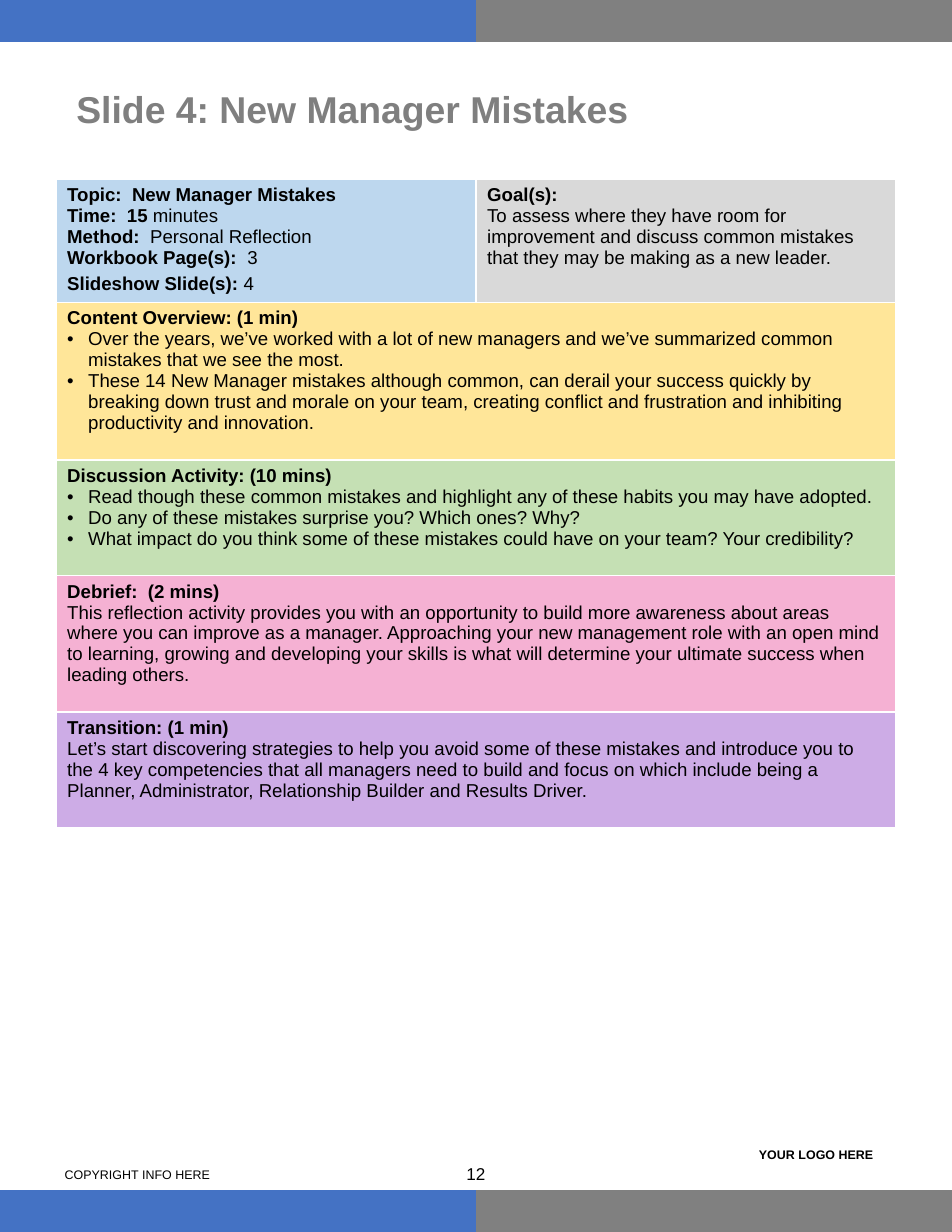
from lxml import etree
from pptx import Presentation
from pptx import util as u
from pptx.dml.color import RGBColor
from pptx.enum import shapes, text
from pptx.oxml import ns

COLORS = {
    "blue": "4472C4", "gray": "808080", "title": "7F7F7F", "black": "000000",
    "white": "FFFFFF", "topic": "BDD7EE", "goals": "D9D9D9",
    "overview": "FFE699", "activity": "C5E0B4", "debrief": "F5B1D3",
    "transition": "CDACE6",
}
WIDTH, HEIGHT, BAND = 612, 792, 27
INDENT = 13.5


def color(name):
    return RGBColor.from_string(COLORS[name])


def add_span(para, words, size=12, bold=False, ink="black", font="Arial"):
    span = para.add_run()
    span.text = words
    span.font.name = font
    span.font.size = u.Pt(size)
    span.font.bold = bold
    span.font.color.rgb = color(ink)


def add_child(parent, tag, **attributes):
    return etree.SubElement(parent, ns.qn(tag), attributes)


class GuidePage:
    """Holds the current slide and the border and bullet style."""

    def __init__(self, slide, border="white", border_width=1, bullet="•"):
        self.slide = slide
        self.border = border
        self.border_width = border_width
        self.bullet = bullet

    def bar(self, left, top, width, height, fill):
        box = self.slide.shapes.add_shape(
            shapes.MSO_SHAPE.RECTANGLE, *map(u.Pt, (left, top, width, height)))
        box.shadow.inherit = False
        box.fill.solid()
        box.fill.fore_color.rgb = color(fill)
        box.line.fill.background()

    def label(self, words, left, top, width, height, align="LEFT",
              anchor="TOP", line_spacing=1.0, **style):
        box = self.slide.shapes.add_textbox(*map(u.Pt, (left, top, width, height)))
        frame = box.text_frame
        frame.word_wrap = True
        frame.vertical_anchor = text.MSO_ANCHOR[anchor]
        para = frame.paragraphs[0]
        para.alignment = text.PP_ALIGN[align]
        para.line_spacing = line_spacing
        add_span(para, words, **style)

    def table(self, left, top, widths, heights):
        frame = self.slide.shapes.add_table(
            len(heights), len(widths),
            *map(u.Pt, (left, top, sum(widths), sum(heights))))
        table = frame.table
        table.first_row = table.horz_banding = False
        for column, width in zip(table.columns, widths):
            column.width = u.Pt(width)
        for row, height in zip(table.rows, heights):
            row.height = u.Pt(height)
        return table

    def cell(self, cell, fill, lines):
        """Each line is (bold part, regular part, is bulleted)."""
        self.cell_borders(cell)
        cell.fill.solid()
        cell.fill.fore_color.rgb = color(fill)
        cell.margin_bottom = 0
        frame = cell.text_frame
        for index, (bold, regular, bulleted) in enumerate(lines):
            para = frame.add_paragraph() if index else frame.paragraphs[0]
            if bulleted:
                self.add_bullet(para)
            if bold:
                add_span(para, bold, bold=True)
            if regular:
                add_span(para, regular)

    def add_bullet(self, para):
        props = para._p.get_or_add_pPr()
        props.set("marL", str(u.Pt(INDENT)))
        props.set("indent", str(-u.Pt(INDENT)))
        add_child(props, "a:buFont", typeface="Arial")
        add_child(props, "a:buChar", char=self.bullet)

    def cell_borders(self, cell):
        props = cell._tc.get_or_add_tcPr()
        for side in "LRTB":
            line = add_child(props, f"a:ln{side}", w=str(u.Pt(self.border_width)))
            fill = add_child(line, "a:solidFill")
            add_child(fill, "a:srgbClr", val=COLORS[self.border])


def heading(words):
    return (words, "", False)


def plain(words):
    return ("", words, False)


def point(words):
    return ("", words, True)


TOPIC = [
    heading("Topic:  New Manager Mistakes"),
    ("Time:  15", " minutes", False),
    ("Method:  ", "Personal Reflection", False),
    ("Workbook Page(s):  ", "3", False),
    ("Slideshow Slide(s): ", "4", False),
]
GOALS = [
    heading("Goal(s):"),
    plain("To assess where they have room for improvement and discuss common "
          "mistakes that they may be making as a new leader."),
]
# Full-width sections: fill, row height, lines
SECTIONS = [
    ("overview", 101.5, [
        heading("Content Overview: (1 min)"),
        point("Over the years, we’ve worked with a lot of new managers and "
              "we’ve summarized common mistakes that we see the most."),
        point("These 14 New Manager mistakes although common, can derail your "
              "success quickly by breaking down trust and morale on your team, "
              "creating conflict and frustration and inhibiting productivity "
              "and innovation."),
    ]),
    ("activity", 74.25, [
        heading("Discussion Activity: (10 mins)"),
        point("Read though these common mistakes and highlight any of these "
              "habits you may have adopted."),
        point("Do any of these mistakes surprise you? Which ones? Why?"),
        point("What impact do you think some of these mistakes could have on "
              "your team? Your credibility?"),
    ]),
    ("debrief", 87.75, [
        heading("Debrief:  (2 mins)"),
        plain("This reflection activity provides you with an opportunity to "
              "build more awareness about areas where you can improve as a "
              "manager. Approaching your new management role with an open mind "
              "to learning, growing and developing your skills is what will "
              "determine your ultimate success when leading others."),
    ]),
    ("transition", 74.25, [
        heading("Transition: (1 min)"),
        plain("Let’s start discovering strategies to help you avoid some of "
              "these mistakes and introduce you to the 4 key competencies that "
              "all managers need to build and focus on which include being a "
              "Planner, Administrator, Relationship Builder and Results Driver."),
    ]),
]


def main():
    deck = Presentation()
    deck.slide_width, deck.slide_height = u.Pt(WIDTH), u.Pt(HEIGHT)
    page = GuidePage(deck.slides.add_slide(deck.slide_layouts[6]))

    # Bands at the top and bottom
    for top in (0, HEIGHT - BAND):
        for column, fill in enumerate(("blue", "gray")):
            page.bar(column * WIDTH / 2, top, WIDTH / 2, BAND, fill)

    # Footer
    page.label("COPYRIGHT INFO HERE", 34.5, 747, 410, 17, size=8)
    page.label("YOUR LOGO HERE", 476.5, 726, 96.5, 32.5, align="CENTER",
               anchor="MIDDLE", size=8, bold=True)
    page.label("12", 288, 744.5, 36, 30, align="CENTER", size=11)

    # Title
    page.label("Slide 4: New Manager Mistakes", 42, 42, 528, 59,
               anchor="MIDDLE", line_spacing=0.9, size=24, bold=True,
               ink="title")

    # Lesson plan table
    heights = [78] + [height for _, height, _ in SECTIONS]
    table = page.table(36, 115.2, [270, 270], heights)
    page.cell(table.cell(0, 0), "topic", TOPIC)
    table.cell(0, 0).text_frame.paragraphs[-1].space_before = u.Pt(3.5)
    page.cell(table.cell(0, 1), "goals", GOALS)
    for row, (fill, _, lines) in enumerate(SECTIONS, start=1):
        table.cell(row, 0).merge(table.cell(row, 1))
        page.cell(table.cell(row, 0), fill, lines)
        page.cell(table.cell(row, 1), fill, [])

    deck.save("out.pptx")


if __name__ == "__main__":
    main()
